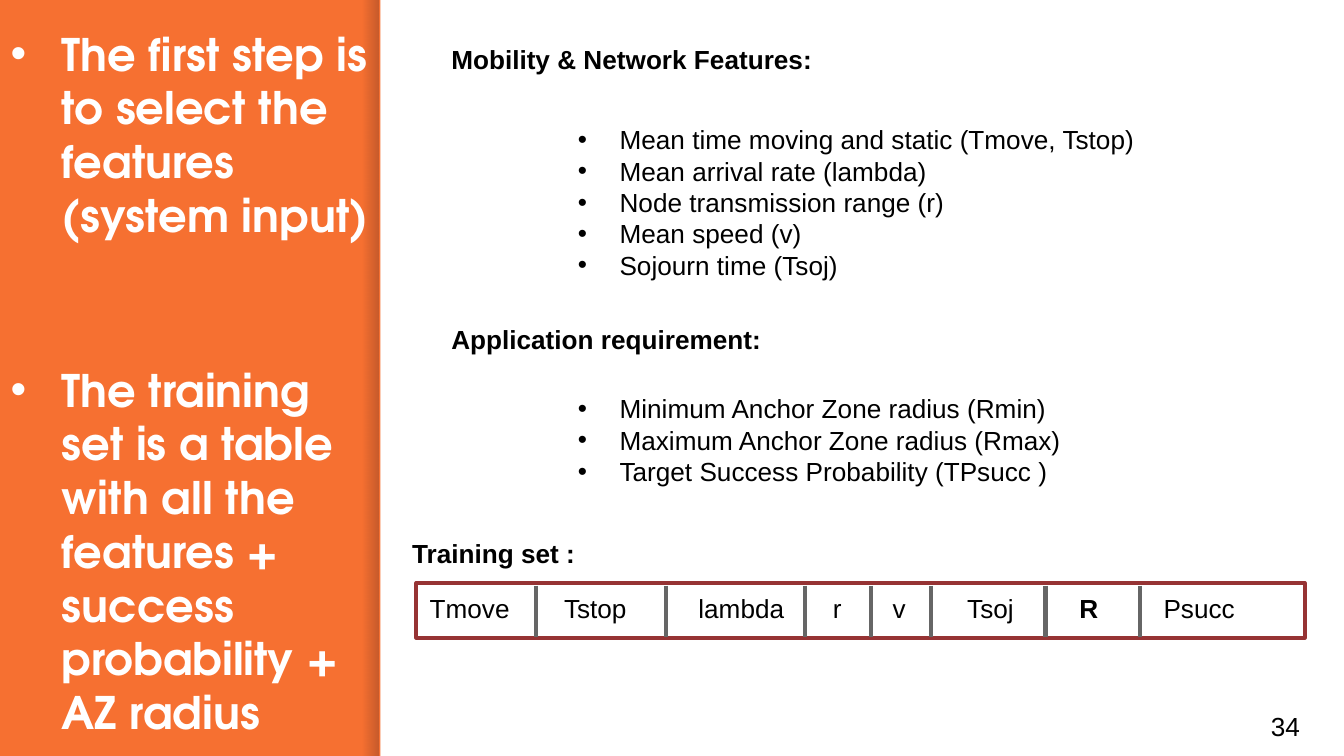
from pptx import Presentation
from pptx.dml.color import RGBColor
from pptx.enum import shapes, text
from pptx.oxml import ns, xmlchemy
from pptx.util import Cm, Pt
from lxml import etree

ORANGE = RGBColor(0xF6, 0x70, 0x31)
WHITE = RGBColor(0xFF, 0xFF, 0xFF)
BLACK = RGBColor(0, 0, 0)
NAVY = RGBColor(0, 0, 0x14)
MAROON = RGBColor(0x96, 0x33, 0x34)
GRAY = RGBColor(0x66, 0x66, 0x66)

STEPS = [
    "The first step is to select the features (system input)",
    "The training set is a table with all the features + success probability + AZ radius",
]
FEATURES = [
    "Mean time moving and static (Tmove, Tstop)",
    "Mean arrival rate (lambda)",
    "Node transmission range (r)",
    "Mean speed (v)",
    "Sojourn time (Tsoj)",
]
REQUIREMENTS = [
    "Minimum Anchor Zone radius (Rmin)",
    "Maximum Anchor Zone radius (Rmax)",
    "Target Success Probability (TPsucc )",
]
COLUMNS = ["Tmove", "Tstop", "lambda", "r", "v", "Tsoj", "R", "Psucc"]
TABS = [2.54, 5.08, 7.62, 8.75, 10.16, 12.28, 13.87]
DIVIDERS = [2.26, 4.72, 7.34, 8.59, 9.73, 11.89, 13.67]


def add_bullet(p, indent, color):
    """Give a paragraph a hanging round bullet."""
    pPr = p._p.get_or_add_pPr()
    pPr.set("marL", str(Cm(indent)))
    pPr.set("indent", str(-Cm(indent)))
    clr = etree.SubElement(pPr, ns.qn("a:buClr"))
    etree.SubElement(clr, ns.qn("a:srgbClr")).set("val", str(color))
    etree.SubElement(pPr, ns.qn("a:buFont")).set("typeface", "Arial")
    etree.SubElement(pPr, ns.qn("a:buChar")).set("char", "•")


def add_tabs(p, stops):
    """Set left tab stops on a paragraph."""
    tabs = etree.SubElement(p._p.get_or_add_pPr(), ns.qn("a:tabLst"))
    for stop in stops:
        tab = etree.SubElement(tabs, ns.qn("a:tab"))
        tab.set("pos", str(Cm(stop)))
        tab.set("algn", "l")


def add_text(slide, box, lines, size=14, font="Arial", color=BLACK, bold=(),
             indent=0, inset=(0.25, 0.13), tabs=(), anchor=text.MSO_ANCHOR.TOP):
    """Add a text box with one paragraph per line, each line a list of runs."""
    sp = slide.shapes.add_textbox(*map(Cm, box))
    tf = sp.text_frame
    tf.word_wrap = True
    tf.vertical_anchor = anchor
    tf.margin_left = tf.margin_right = Cm(inset[0])
    tf.margin_top = tf.margin_bottom = Cm(inset[1])
    for i, runs in enumerate(lines):
        p = tf.paragraphs[0] if i == 0 else tf.add_paragraph()
        if indent:
            add_bullet(p, indent, color)
        if tabs:
            add_tabs(p, tabs)
        for content in runs:
            r = p.add_run()
            r.text = content
            r.font.size, r.font.name = Pt(size), font
            r.font.bold = content.strip() in bold
            r.font.color.rgb = color
    return sp


def add_rect(slide, box):
    """Add a rectangle without shadow, fill or line."""
    sp = slide.shapes.add_shape(shapes.MSO_SHAPE.RECTANGLE, *map(Cm, box))
    sp.shadow.inherit = False
    sp.fill.background()
    sp.line.fill.background()
    return sp


def add_divider(slide, x, top, bottom):
    """Add a vertical rule."""
    line = slide.shapes.add_connector(
        shapes.MSO_CONNECTOR.STRAIGHT, Cm(x), Cm(top), Cm(x), Cm(bottom))
    line.line.color.rgb = GRAY
    line.line.width = Pt(2.25)
    etree.SubElement(line._element.spPr, ns.qn("a:effectLst"))


def add_backdrop(slide, box):
    """Draw the white content panel and the shade along its left edge."""
    x, y, w, h = box
    shade = add_rect(slide, (x - 0.33, y, 0.3, h))
    shade.fill.gradient()
    shade.fill.gradient_angle = 0
    for stop, alpha in zip(shade.fill.gradient_stops, (0, 20000)):
        stop.color.rgb = NAVY
        clr = stop._gs.find(ns.qn("a:srgbClr"))
        etree.SubElement(clr, ns.qn("a:alpha")).set("val", str(alpha))
    panel = add_rect(slide, box)
    panel.fill.solid()
    panel.fill.fore_color.rgb = WHITE


def add_steps(slide, box):
    """Stack the two steps in equal halves of the sidebar."""
    x, y, w, h = box
    for i, step in enumerate(STEPS):
        add_text(slide, (x, y + i * h / 2, w, h / 2), [[step]], size=24,
                 font="TeX Gyre Adventor", color=WHITE, bold=[step],
                 indent=0.97, inset=(0.25, 0.25))


def add_section(slide, box, heading, items, gap):
    """Place a bold heading with an indented bullet list under it."""
    x, y, w, h = box
    add_text(slide, (x, y, w, 0.86), [[heading]], bold=[heading])
    add_text(slide, (x + 2.39, y + gap, w - 2.39, h - gap),
             [[item] for item in items], indent=0.79)


def add_training_set(slide, box):
    """Draw the caption and the framed row of training columns."""
    x, y, w, h = box
    caption = "Training set :"
    add_text(slide, (x - 0.33, y, 3.63, 0.86), [[caption]], bold=[caption])
    top, height = y + 0.99, h - 0.99
    runs = [COLUMNS[0]] + ["\t" + name for name in COLUMNS[1:]]
    add_text(slide, (x, top + 0.05, w, 0.86), [runs], bold=["R"], tabs=TABS)
    frame = add_rect(slide, (x, top, w, height))
    frame.line.color.rgb = MAROON
    frame.line.width = Pt(2)
    for offset in DIVIDERS:
        add_divider(slide, x + offset, top + 0.05, top + height - 0.02)


def main():
    """Build and save the slide."""
    prs = Presentation()
    prs.slide_width, prs.slide_height = Cm(25.4), Cm(14.29)
    slide = prs.slides.add_slide(prs.slide_layouts[6])
    slide.background.fill.solid()
    slide.background.fill.fore_color.rgb = ORANGE
    add_backdrop(slide, (7.19, 0, 18.21, 14.29))
    add_steps(slide, (-0.05, 0.25, 7.34, 12.7))
    add_section(slide, (8.28, 0.69, 13.6, 5.97),
                "Mobility & Network Features:", FEATURES, 1.52)
    add_section(slide, (8.28, 5.99, 13.6, 4.55),
                "Application requirement:", REQUIREMENTS, 1.3)
    add_training_set(slide, (7.87, 10.03, 16.79, 2.03))
    add_text(slide, (23.77, 13.18, 1.52, 1.09), [["34"]],
             inset=(0.25, 0.25), anchor=text.MSO_ANCHOR.MIDDLE)
    prs.save("out.pptx")


if __name__ == "__main__":
    main()
